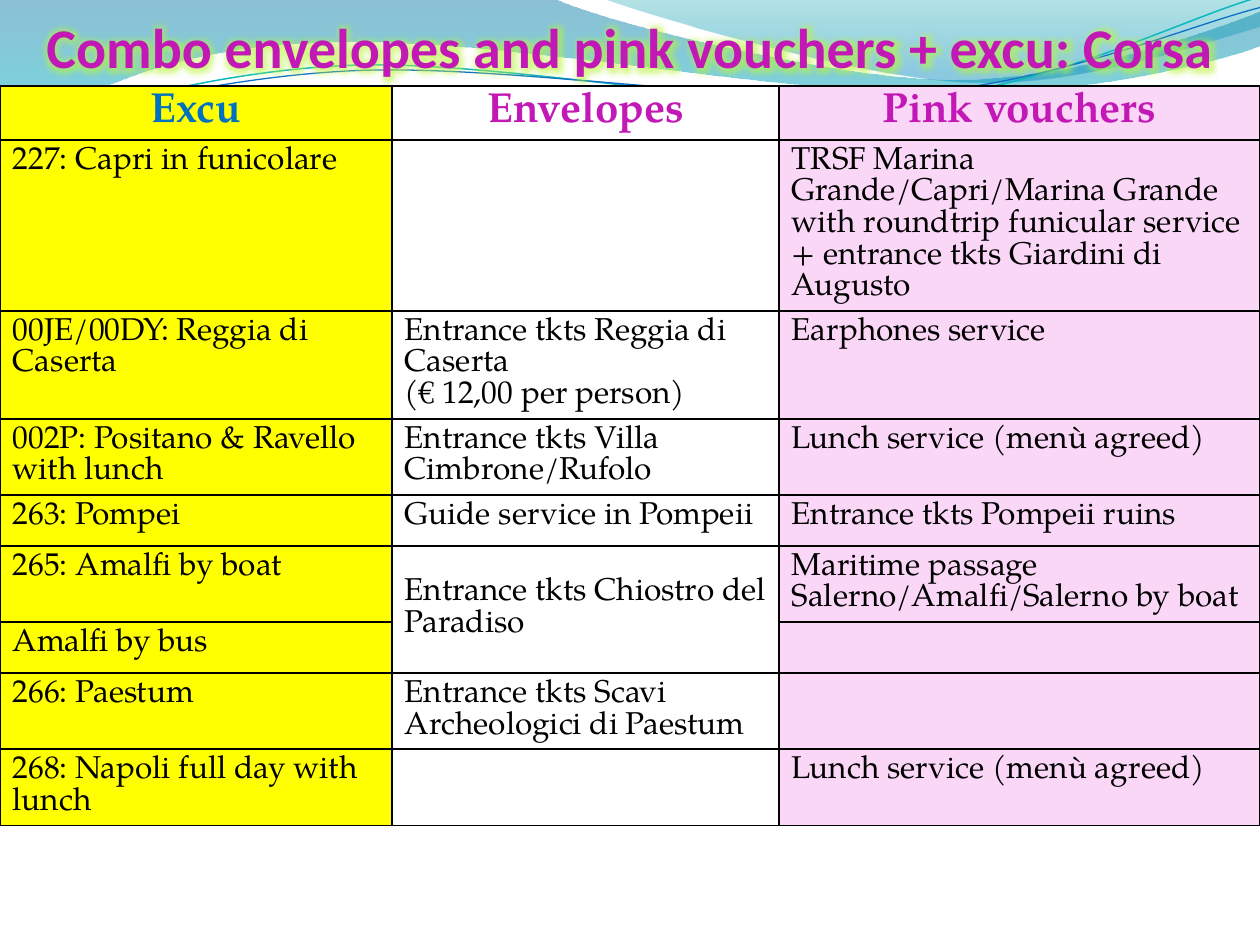
from dataclasses import dataclass
from lxml import etree
from pptx import Presentation
from pptx.dml.color import RGBColor
from pptx.enum import text
from pptx.oxml import ns
from pptx.util import Pt


@dataclass(frozen=True)
class Theme:
    title_font: str = "Calibri"
    body_font: str = "TeX Gyre Pagella"
    title_size: float = 32
    head_size: float = 24
    body_size: float = 18
    magenta: str = "C218B6"
    blue: str = "0070C0"
    black: str = "000000"
    glow: str = "B8F53C"
    columns: tuple = ("FFFF00", "FFFFFF", "FAD6F7")


T = Theme()
COL_WIDTHS = (224, 221.2, 274.8)
ROW_HEIGHT = 29.2
TABLE_TOP = 49.25
TABLE_HEIGHT = 461.5

HEADS = (("Excu", T.blue), ("Envelopes", T.magenta), ("Pink vouchers", T.magenta))
ROWS = (
    ("227: Capri in funicolare", "",
     "TRSF Marina Grande/Capri/Marina Grande with roundtrip funicular service "
     "+ entrance tkts Giardini di Augusto"),
    ("00JE/00DY: Reggia di Caserta",
     "Entrance tkts Reggia di Caserta\n(€ 12,00 per person)", "Earphones service"),
    ("002P: Positano & Ravello with lunch", "Entrance tkts Villa Cimbrone/Rufolo",
     "Lunch service (menù agreed)"),
    ("263: Pompei", "Guide service in Pompeii", "Entrance tkts Pompeii ruins"),
    ("265: Amalfi by boat", "Entrance tkts Chiostro del Paradiso",
     "Maritime passage Salerno/Amalfi/Salerno by boat"),
    ("Amalfi by bus", "", ""),
    ("266: Paestum", "Entrance tkts Scavi Archeologici di Paestum", ""),
    ("268: Napoli full day with lunch", "", "Lunch service (menù agreed)"),
)
AMALFI_ROW = 5

WAVES = (
    (((0, 0), (316.8, -0.7),
      (342.7, 12.2, 478.1, 45.4, 545.8, 45.4), (614.2, 45.4, 689.8, 18.7, 720, 6.5),
      (720.7, 25.9), (707.8, 31.7, 626.4, 54.7, 537.1, 54),
      (447.8, 54, 275, 20.2, 185, 24.5), (92.9, 25.9, 33.1, 59.8, -0.7, 81.4)),
     ((0, "0074A1", 45), (1, "00C6CF", 55))),
    (((344.9, -0.7), (366.5, 7.9, 491, 44.6, 553.7, 46.8),
      (616.3, 49.7, 691.9, 23, 720, 15.1), (720, 0)),
     ((0, "00A1A9", 30), (0.8, "008BBF", 45))),
)
STRANDS = (
    (((0, 79.9), (34.6, 67, 113.8, 41, 199.4, 37.4),
      (284.4, 33.8, 427, 64.1, 513.4, 57.6), (599.8, 51.1, 675.4, 10.8, 718.6, -1.4)),
     "0AB8BF", 0.85),
    (((0, 74.9), (33.8, 69.1, 118.1, 43.9, 203.8, 40.3),
      (290.2, 36.7, 429.8, 60.5, 516.2, 54), (601.9, 48.2, 677.5, 15.1, 720, 4.3)),
     "0F6FC6", 0.75),
)


def rgb(value):
    return RGBColor.from_string(value)


def sub(parent, tag, **attrs):
    return etree.SubElement(parent, ns.qn(tag), {k: str(v) for k, v in attrs.items()})


def bend_lines(sp, segments):
    lines = iter(list(sp._element.iter(ns.qn("a:lnTo"))))
    for seg in segments[1:]:
        steps = [next(lines) for _ in range(len(seg) // 2)]
        if len(steps) == 3:
            curve = etree.Element(ns.qn("a:cubicBezTo"))
            steps[0].addprevious(curve)
            for step in steps:
                curve.append(step[0])
                step.getparent().remove(step)


def add_outline(s, segments, close):
    points = [(Pt(x), Pt(y)) for seg in segments for x, y in zip(seg[::2], seg[1::2])]
    builder = s.shapes.build_freeform(*points[0], scale=1.0)
    builder.add_line_segments(points[1:], close=close)
    sp = builder.convert_to_shape()
    bend_lines(sp, segments)
    sp.shadow.inherit = False
    return sp


def add_wave(s, segments, stops):
    sp = add_outline(s, segments, True)
    sp.line.fill.background()
    sp.fill.gradient()
    sp.fill.gradient_angle = 270
    for stop, (position, color, _) in zip(sp.fill.gradient_stops, stops):
        stop.position = position
        stop.color.rgb = rgb(color)
    for clr, (_, _, opacity) in zip(sp._element.spPr.iter(ns.qn("a:srgbClr")), stops):
        sub(clr, "a:alpha", val=opacity * 1000)


def add_strand(s, segments, color, width):
    sp = add_outline(s, segments, False)
    sp.fill.background()
    sp.line.color.rgb = rgb(color)
    sp.line.width = Pt(width)


def format_run(r, font, size, color, bold):
    r.font.name = font
    r.font.size = Pt(size)
    r.font.bold = bold
    r.font.color.rgb = rgb(color)


def add_glow(r):
    effects = etree.Element(ns.qn("a:effectLst"))
    glow = sub(effects, "a:glow", rad=Pt(11))
    sub(sub(glow, "a:srgbClr", val=T.glow), "a:alpha", val=60000)
    r._r.rPr.find(ns.qn("a:solidFill")).addnext(effects)


def set_title(s, wording):
    sp = s.shapes.title
    s.shapes._spTree.append(sp._element)
    sp.left, sp.top, sp.width, sp.height = Pt(0), Pt(0), Pt(720), Pt(45.4)
    tf = sp.text_frame
    tf.text = wording
    tf.word_wrap = True
    tf.auto_size = text.MSO_AUTO_SIZE.NONE
    tf.vertical_anchor = text.MSO_ANCHOR.BOTTOM
    tf.margin_left = tf.margin_right = tf.margin_bottom = Pt(0)
    tf.margin_top = Pt(3.6)
    p = tf.paragraphs[0]
    p.alignment = text.PP_ALIGN.CENTER
    format_run(p.runs[0], T.title_font, T.title_size, T.magenta, True)
    add_glow(p.runs[0])


def set_borders(cell):
    tcPr = cell._tc.get_or_add_tcPr()
    for i, side in enumerate(("a:lnL", "a:lnR", "a:lnT", "a:lnB")):
        ln = etree.Element(ns.qn(side), {"w": str(Pt(1))})
        sub(sub(ln, "a:solidFill"), "a:srgbClr", val=T.black)
        tcPr.insert(i, ln)


def fill_cell(cell, wording, background, size, color, bold, align):
    cell.fill.solid()
    cell.fill.fore_color.rgb = rgb(background)
    set_borders(cell)
    if not wording:
        return
    cell.text_frame.text = wording
    for p in cell.text_frame.paragraphs:
        p.alignment = align
        for r in p.runs:
            format_run(r, T.body_font, size, color, bold)


def add_excursion_table(s):
    count = len(ROWS) + 1
    frame = s.shapes.add_table(count, len(HEADS), Pt(0), Pt(TABLE_TOP),
                               Pt(sum(COL_WIDTHS)), Pt(ROW_HEIGHT * count))
    table = frame.table
    table.first_row = table.horz_banding = False
    for column, width in zip(table.columns, COL_WIDTHS):
        column.width = Pt(width)
    for row in table.rows:
        row.height = Pt(ROW_HEIGHT)
    frame.height = Pt(TABLE_HEIGHT)
    for col, (background, (head, color)) in enumerate(zip(T.columns, HEADS)):
        fill_cell(table.cell(0, col), head, background, T.head_size, color, True,
                  text.PP_ALIGN.CENTER)
        for row, wordings in enumerate(ROWS, 1):
            fill_cell(table.cell(row, col), wordings[col], background, T.body_size,
                      T.black, False, text.PP_ALIGN.LEFT)
    shared = table.cell(AMALFI_ROW, 1)
    shared.merge(table.cell(AMALFI_ROW + 1, 1))
    shared.vertical_anchor = text.MSO_ANCHOR.MIDDLE


def main():
    prs = Presentation()
    prs.slide_width, prs.slide_height = Pt(720), Pt(540)
    s = prs.slides.add_slide(prs.slide_layouts[5])
    for wave in WAVES:
        add_wave(s, *wave)
    for strand in STRANDS:
        add_strand(s, *strand)
    set_title(s, "Combo envelopes and pink vouchers + excu: Corsa")
    add_excursion_table(s)
    prs.save("out.pptx")


if __name__ == "__main__":
    main()
